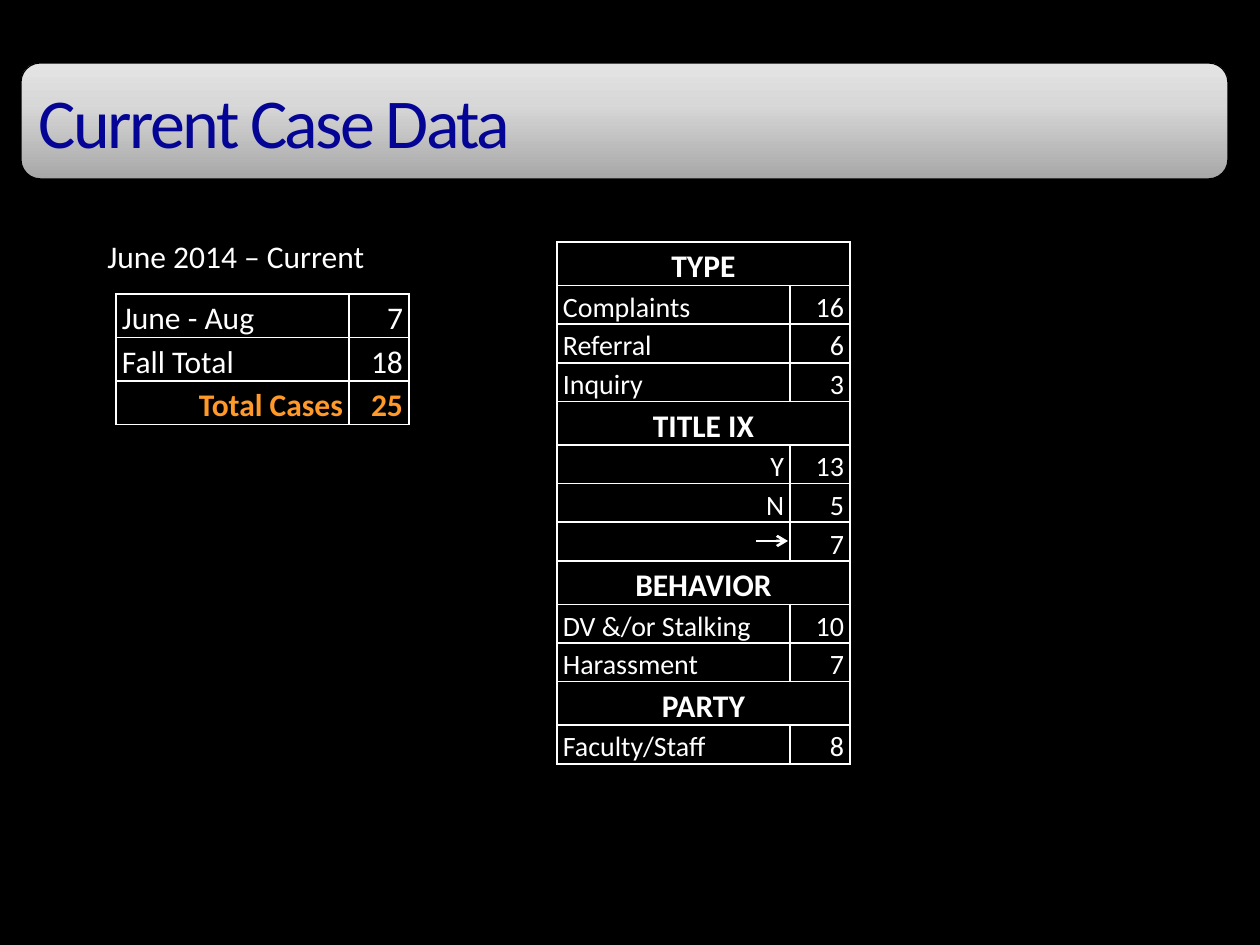
from copy import deepcopy
from dataclasses import dataclass

from lxml.etree import SubElement
from pptx import Presentation
from pptx.dml.color import RGBColor
from pptx.enum.shapes import MSO_CONNECTOR, MSO_SHAPE
from pptx.enum.text import MSO_ANCHOR, PP_ALIGN
from pptx.oxml import parse_xml
from pptx.oxml.ns import nsdecls, qn
from pptx.util import Emu, Pt


@dataclass(frozen=True)
class Theme:
    font: str = "Calibri"
    background: str = "000000"
    text: str = "FFFFFF"
    title: str = "050595"
    accent: str = "FF9929"
    banner: tuple = ((0, "A7A7A7"), (0.65, "D8D8D8"), (1, "E4E4E4"))
    title_size: int = 40
    head_size: int = 18
    body_size: int = 16


T = Theme()
LEFT, CENTER, RIGHT = PP_ALIGN.LEFT, PP_ALIGN.CENTER, PP_ALIGN.RIGHT
COLUMNS = (233, 60)
ROW_HEIGHTS = {T.head_size: 43, T.body_size: 38}


def px(n):
    return Emu(round(n * 914400 / 126))


def rgb(color):
    return RGBColor.from_string(color)


def style(p, size, color=T.text, bold=False, align=LEFT):
    p.alignment = align
    p.font.name, p.font.size, p.font.bold = T.font, Pt(size), bold
    p.font.color.rgb = rgb(color)


def add_banner(s, x, y, w, h, text):
    sp = s.shapes.add_shape(MSO_SHAPE.ROUNDED_RECTANGLE, px(x), px(y), px(w), px(h))
    sp.shadow.inherit = False
    sp.line.color.rgb, sp.line.width = rgb(T.background), Pt(0.75)
    # Three-stop gradient, light at the top
    sp.fill.gradient()
    sp.fill.gradient_angle = 90
    stops = sp.fill._xPr.find(qn("a:gradFill")).find(qn("a:gsLst"))
    stops.insert(1, deepcopy(stops[0]))
    for stop, (position, color) in zip(sp.fill.gradient_stops, T.banner):
        stop.position, stop.color.rgb = position, rgb(color)
    # Tightly spaced title
    tf = sp.text_frame
    tf.word_wrap, tf.vertical_anchor = True, MSO_ANCHOR.MIDDLE
    p = tf.paragraphs[0]
    style(p, T.title_size, T.title)
    r = p.add_run()
    r.text = text
    r.font._element.set("spc", "-150")


def add_label(s, x, y, w, h, text):
    tf = s.shapes.add_textbox(px(x), px(y), px(w), px(h)).text_frame
    tf.word_wrap = True
    tf.text = text
    style(tf.paragraphs[0], T.head_size)


def add_borders(cell):
    tc_pr = cell._tc.get_or_add_tcPr()
    for i, side in enumerate(("lnL", "lnR", "lnT", "lnB")):
        tc_pr.insert(i, parse_xml(
            f'<a:{side} {nsdecls("a")} w="12700"><a:solidFill>'
            f'<a:srgbClr val="{T.text}"/></a:solidFill></a:{side}>'))


def add_case_table(s, x, y, rows):
    """Each row: label, count (None for a heading), label alignment, size, colour, bold."""
    heights = [ROW_HEIGHTS[row[3]] for row in rows]
    table = s.shapes.add_table(len(rows), len(COLUMNS), px(x), px(y),
                               px(sum(COLUMNS)), px(sum(heights))).table
    table.first_row = table.horz_banding = False
    for column, width in zip(table.columns, COLUMNS):
        column.width = px(width)
    for i, (label, count, align, size, color, bold) in enumerate(rows):
        table.rows[i].height = px(heights[i])
        if count is None:
            table.cell(i, 0).merge(table.cell(i, 1))
        for j, (text, side) in enumerate(((label, align), (count, RIGHT))):
            cell = table.cell(i, j)
            cell.fill.background()
            add_borders(cell)
            cell.margin_left = cell.margin_right = px(6)
            cell.margin_top = cell.margin_bottom = 0
            p = cell.text_frame.paragraphs[0]
            if text:
                p.text = text
            p.line_spacing = 1.15
            style(p, size, color, bold, side)


def add_arrow(s, x, y, w):
    line = s.shapes.add_connector(MSO_CONNECTOR.STRAIGHT, px(x), px(y), px(x + w), px(y))
    line.line.color.rgb, line.line.width = rgb(T.text), Pt(1.5)
    SubElement(line.line._get_or_add_ln(), qn("a:tailEnd"), type="arrow")
    SubElement(line._element.spPr, qn("a:effectLst"))


def heading(label):
    return label, None, CENTER, T.head_size, T.text, True


def entry(label, count, align=LEFT, size=T.body_size):
    return label, count, align, size, T.text, False


def add_period(s, x, y):
    add_label(s, x, y, 336, 50, "June 2014 – Current")
    add_case_table(s, x + 21, y + 63, [
        entry("June - Aug", "7", size=T.head_size),
        entry("Fall Total", "18", size=T.head_size),
        ("Total Cases", "25", RIGHT, T.head_size, T.accent, True),
    ])


def add_breakdown(s, x, y):
    add_case_table(s, x, y, [
        heading("TYPE"),
        entry("Complaints", "16"),
        entry("Referral", "6"),
        entry("Inquiry", "3"),
        heading("TITLE IX"),
        entry("Y", "13", RIGHT),
        entry("N", "5", RIGHT),
        entry("", "7", RIGHT),
        heading("BEHAVIOR"),
        entry("DV &/or Stalking", "10"),
        entry("Harassment", "7"),
        heading("PARTY"),
        entry("Faculty/Staff", "8"),
    ])
    # Arrow in the unlabelled Title IX row
    add_arrow(s, x + 199, y + 299, 32)


def main():
    prs = Presentation()
    prs.slide_width, prs.slide_height = px(1260), px(945)
    s = prs.slides.add_slide(prs.slide_layouts[6])
    s.background.fill.solid()
    s.background.fill.fore_color.rgb = rgb(T.background)
    add_banner(s, 21, 63, 1207, 116, "Current Case Data")
    add_period(s, 95, 231)
    add_breakdown(s, 557, 242)
    prs.save("out.pptx")


if __name__ == "__main__":
    main()
